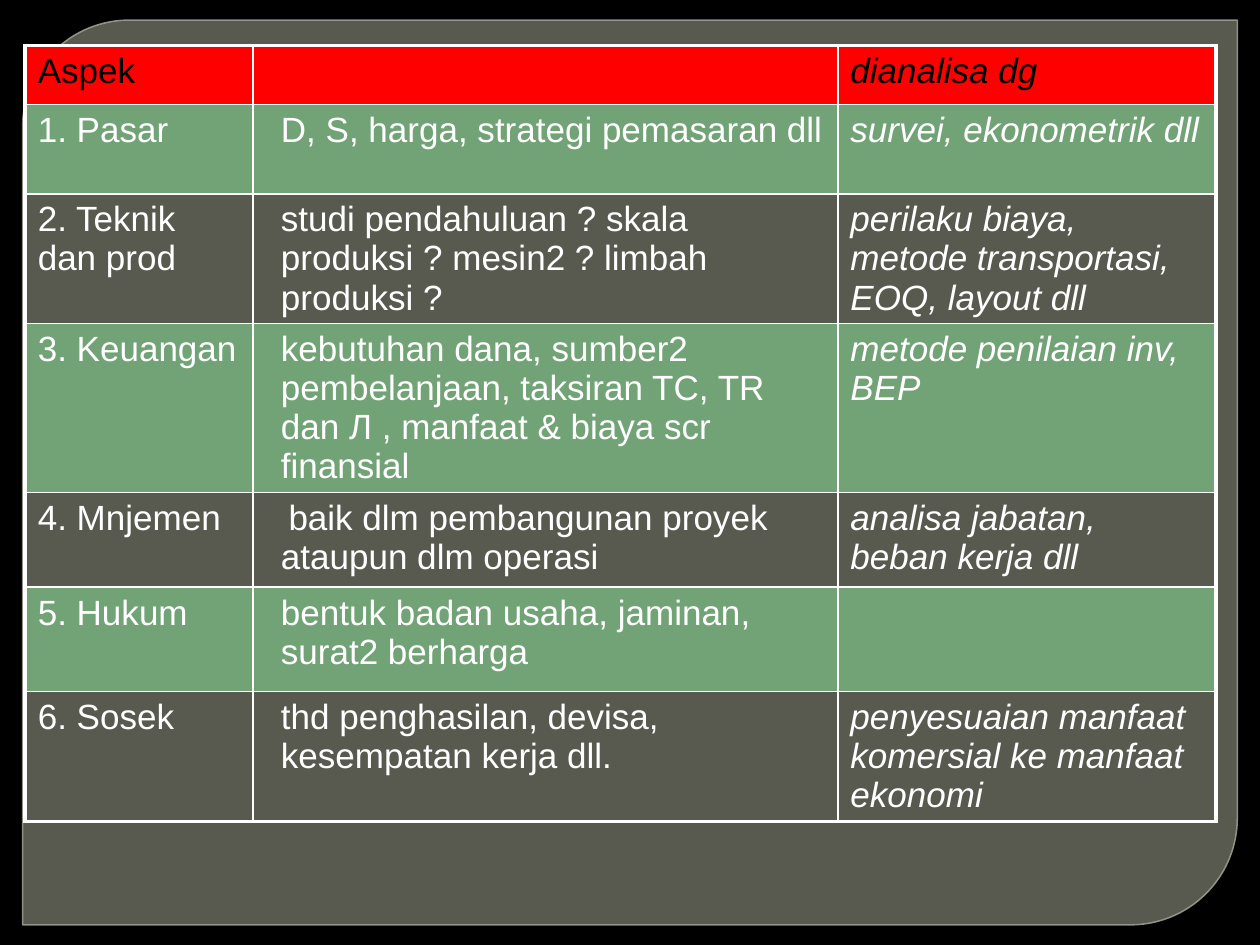
from lxml import etree
from pptx import Presentation
from pptx.dml.color import RGBColor
from pptx.enum.shapes import MSO_SHAPE
from pptx.oxml.ns import qn
from pptx.util import Inches, Pt

PANEL = MSO_SHAPE.ROUND_2_DIAG_RECTANGLE
COLORS = {"black": "000000", "white": "FFFFFF", "red": "FF0000",
          "green": "72A376", "olive": "888B7B", "edge": "9DA090"}

ROWS = [
    ("Aspek", "", "dianalisa dg"),
    ("1. Pasar", "D, S, harga, strategi pemasaran dll", "survei, ekonometrik dll"),
    ("2. Teknik dan prod",
     "studi pendahuluan ? skala produksi ? mesin2 ? limbah produksi ?",
     "perilaku biaya, metode transportasi, EOQ, layout dll"),
    ("3. Keuangan",
     "kebutuhan dana, sumber2 pembelanjaan, taksiran TC, TR dan Л , "
     "manfaat & biaya scr finansial",
     "metode penilaian inv, BEP"),
    ("4. Mnjemen", "baik dlm pembangunan proyek ataupun dlm operasi",
     "analisa jabatan, beban kerja dll"),
    ("5. Hukum", "bentuk badan usaha, jaminan, surat2 berharga", ""),
    ("6. Sosek", "thd penghasilan, devisa, kesempatan kerja dll.",
     "penyesuaian manfaat komersial ke manfaat ekonomi"),
]
WIDTHS = [1.81, 4.64, 3]
HEIGHTS = [0.47, 0.71, 0.73, 0.71, 0.75, 0.83, 0.71]
# Left margin, first-line indent and level of the middle column, by row
INDENTS = {1: (0.06, 0.06, 0), 2: (0.12, 0, 1), 3: (0.12, 0, 1),
           4: (0.12, 0.06, 0), 5: (0.12, 0, 0), 6: (0.12, 0, 1)}
THIN, THICK = 1, 2.25


def rgb(name):
    return RGBColor.from_string(COLORS[name])


def fade(fill, percent):
    """Set the opacity of a solid fill element."""
    alpha = etree.SubElement(fill.find(qn("a:srgbClr")), qn("a:alpha"))
    alpha.set("val", str(percent * 1000))


def add_panel(slide):
    panel = slide.shapes.add_shape(PANEL, Inches(0.18), Inches(0.16),
                                   Inches(9.64), Inches(7.18))
    panel.shadow.inherit = False
    panel.adjustments[0] = 0.118
    panel.adjustments[1] = 0
    panel.fill.solid()
    panel.fill.fore_color.rgb = rgb("olive")
    panel.line.color.rgb = rgb("edge")
    panel.line.width = Pt(0.87)
    props = panel.element.spPr
    fade(props.find(qn("a:solidFill")), 65)
    fade(props.find(qn("a:ln")).find(qn("a:solidFill")), 88)


def put_text(cell, text, color="white", italic=False, indent=None):
    para = cell.text_frame.paragraphs[0]
    para.space_before = Pt(4)
    para.font.size = Pt(20)
    if indent:
        left, first, para.level = indent
        props = para._p.get_or_add_pPr()
        props.set("marL", str(Inches(left)))
        props.set("indent", str(Inches(first)))
    if text:
        run = para.add_run()
        run.text = text
        run.font.name = "Arial"
        run.font.size = Pt(20)
        run.font.italic = italic
        run.font.color.rgb = rgb(color)


def set_edges(cell, widths):
    """Draw white cell borders; widths maps L, R, T, B to points."""
    props = cell._tc.get_or_add_tcPr()
    for spot, (side, width) in enumerate(widths.items()):
        line = etree.Element(qn(f"a:ln{side}"), w=str(Pt(width)))
        fill = etree.SubElement(line, qn("a:solidFill"))
        etree.SubElement(fill, qn("a:srgbClr"), val=COLORS["white"])
        props.insert(spot, line)


def add_grid(slide):
    table = slide.shapes.add_table(
        len(ROWS), len(WIDTHS), Inches(0.2), Inches(0.36),
        Inches(sum(WIDTHS)), Inches(sum(HEIGHTS))).table
    for col, width in zip(table.columns, WIDTHS):
        col.width = Inches(width)
    for row, height in zip(table.rows, HEIGHTS):
        row.height = Inches(height)

    end_row, end_col = len(ROWS) - 1, len(WIDTHS) - 1
    for r, texts in enumerate(ROWS):
        for c, text in enumerate(texts):
            cell = table.cell(r, c)
            if r == 0 or r % 2:
                cell.fill.solid()
                cell.fill.fore_color.rgb = rgb("green" if r else "red")
            else:
                cell.fill.background()
            put_text(cell, text, color="white" if r else "black",
                     italic=c == end_col,
                     indent=INDENTS.get(r) if c == 1 else None)
            outer = {"L": c == 0, "R": c == end_col,
                     "T": r == 0, "B": r == end_row}
            set_edges(cell, {side: THICK if out else THIN
                             for side, out in outer.items()})


def main():
    deck = Presentation()
    deck.slide_width, deck.slide_height = Inches(10), Inches(7.5)
    slide = deck.slides.add_slide(deck.slide_layouts[6])
    slide.background.fill.solid()
    slide.background.fill.fore_color.rgb = rgb("black")
    add_panel(slide)
    add_grid(slide)
    deck.save("out.pptx")


if __name__ == "__main__":
    main()
